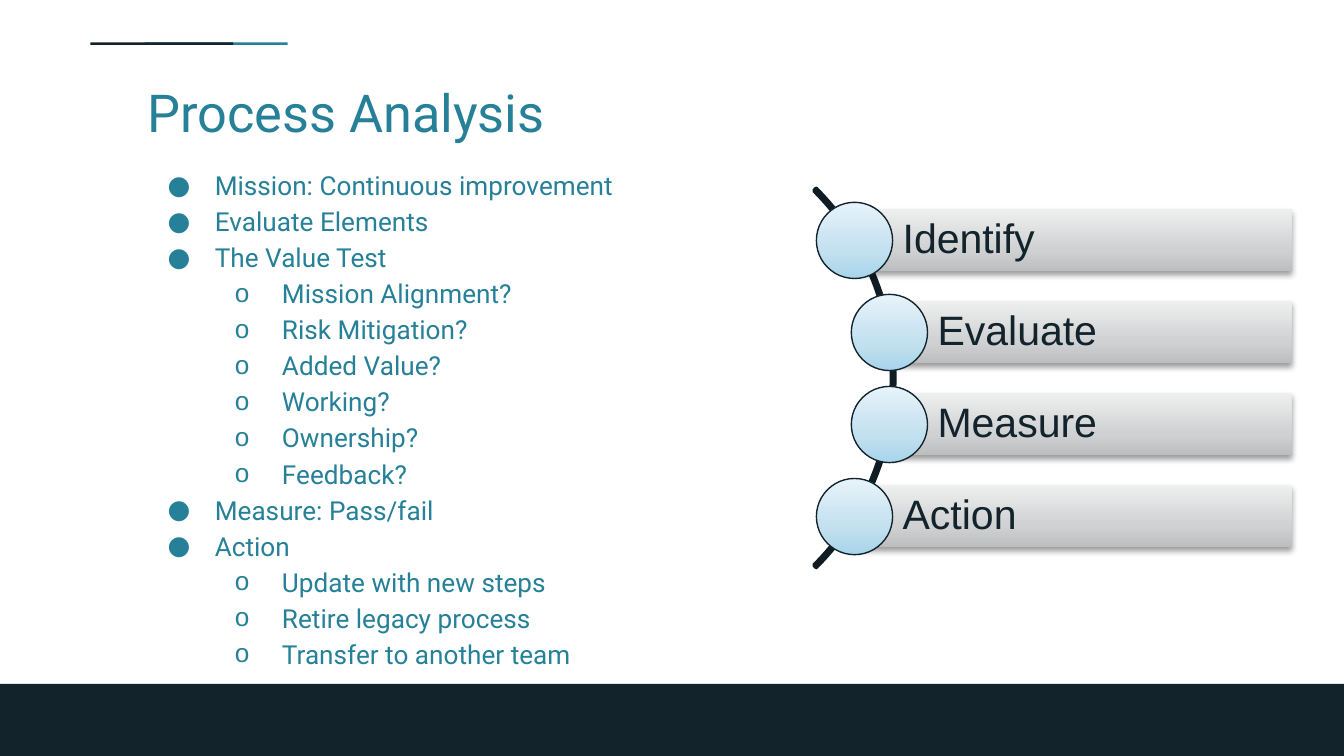
import pptx
import pptx.util
import pptx.oxml
import pptx.dml.color
import pptx.enum.shapes
import pptx.enum.text
from pptx.util import Cm

RGB = pptx.dml.color.RGBColor
KIND = pptx.enum.shapes.MSO_SHAPE
ANCHOR = pptx.enum.text.MSO_ANCHOR
ALIGN = pptx.enum.text.PP_ALIGN

NAVY = RGB(0x13, 0x23, 0x2C)
TEAL = RGB(0x26, 0x80, 0x98)
INK = RGB(0x0F, 0x1C, 0x23)
GREY = [(0, RGB(0xBC, 0xBE, 0xBF)), (35, RGB(0xD0, 0xD1, 0xD2)), (100, RGB(0xED, 0xEE, 0xEE))]
BLUE = [(0, RGB(0xA8, 0xD4, 0xEA)), (35, RGB(0xC2, 0xE0, 0xEF)), (100, RGB(0xE7, 0xF3, 0xFA))]
NS = 'xmlns:a="http://schemas.openxmlformats.org/drawingml/2006/main"'

# Outline level and text
POINTS = [
    (0, "Mission: Continuous improvement"),
    (0, "Evaluate Elements"),
    (0, "The Value Test"),
    (1, "Mission Alignment?"),
    (1, "Risk Mitigation?"),
    (1, "Added Value?"),
    (1, "Working?"),
    (1, "Ownership?"),
    (1, "Feedback?"),
    (0, "Measure: Pass/fail"),
    (0, "Action"),
    (1, "Update with new steps"),
    (1, "Retire legacy process"),
    (1, "Transfer to another team"),
]
# Step name and left edge in cm
STEPS = [("Identify", 16.15), ("Evaluate", 16.81), ("Measure", 16.81), ("Action", 16.15)]


def put(item, **values):
    for name, value in values.items():
        setattr(item, name, value)


def xml(text):
    return pptx.oxml.parse_xml(text)


def shape(slide, kind, left, top, width, height, fill=None, line=None, weight=0):
    item = slide.shapes.add_shape(kind, Cm(left), Cm(top), Cm(width), Cm(height))
    item.shadow.inherit = False
    if fill is None:
        item.fill.background()
    else:
        item.fill.solid()
        item.fill.fore_color.rgb = fill
    if line is None:
        item.line.fill.background()
    else:
        item.line.color.rgb = line
        item.line.width = pptx.util.Pt(weight)
    return item


def blend(item, stops):
    """Give a shape a gradient that runs from bottom to top."""
    marks = "".join(f'<a:gs pos="{pos * 1000}"><a:srgbClr val="{tone}"/></a:gs>'
                    for pos, tone in stops)
    item.fill.background()
    old = item.element.spPr.find(pptx.oxml.ns.qn("a:noFill"))
    old.getparent().replace(old, xml(
        f'<a:gradFill {NS} rotWithShape="1"><a:gsLst>{marks}</a:gsLst>'
        '<a:lin ang="16200000" scaled="0"/></a:gradFill>'))


def shade(item):
    """Drop a soft shadow below a shape."""
    item.element.spPr.find(pptx.oxml.ns.qn("a:effectLst")).append(xml(
        f'<a:outerShdw {NS} blurRad="40000" dist="20000" dir="5400000" rotWithShape="0">'
        '<a:srgbClr val="000000"><a:alpha val="38000"/></a:srgbClr></a:outerShdw>'))


def style(para, size, name, color):
    put(para.font, size=pptx.util.Pt(size), name=name)
    para.font.color.rgb = color


def box(slide, left, top, width, height):
    frame = slide.shapes.add_textbox(Cm(left), Cm(top), Cm(width), Cm(height)).text_frame
    inset = Cm(0.25)
    put(frame, word_wrap=True, margin_left=inset, margin_right=inset,
        margin_top=inset, margin_bottom=inset)
    return frame


def bullet(para, level):
    props = para._p.get_or_add_pPr()
    props.set("marL", str(Cm(1.27 * (level + 1))))
    props.set("indent", str(-Cm(0.89)))
    props.append(xml(f'<a:buClr {NS}><a:srgbClr val="{TEAL}"/></a:buClr>'))
    props.append(xml(f'<a:buFont {NS} typeface="{("Roboto", "Arial")[level]}"/>'))
    props.append(xml(f'<a:buChar {NS} char="{"●o"[level]}"/>'))


def outline(slide):
    frame = box(slide, 2.54, 2.87, 12.17, 9.88)
    for i, (level, text) in enumerate(POINTS):
        para = frame.add_paragraph() if i else frame.paragraphs[0]
        bullet(para, level)
        put(para, text=text, level=level, line_spacing=1.15)
        style(para, 14, "Roboto", TEAL)


def step(slide, text, left, top):
    tall, dot = 1.17, 1.44
    bar = shape(slide, KIND.RECTANGLE, left, top, 24.41 - left, tall)
    blend(bar, GREY)
    shade(bar)
    inset = Cm(0.15)
    put(bar.text_frame, vertical_anchor=ANCHOR.MIDDLE, word_wrap=True,
        margin_left=Cm(0.91), margin_right=inset, margin_top=inset, margin_bottom=inset)
    para = bar.text_frame.paragraphs[0]
    put(para, text=text, alignment=ALIGN.LEFT, line_spacing=0.9)
    style(para, 22, "Arial", NAVY)
    ball = shape(slide, KIND.OVAL, left - dot / 2, top + (tall - dot) / 2, dot, dot,
                 line=NAVY, weight=0.75)
    blend(ball, BLUE)


def main():
    deck = pptx.Presentation()
    put(deck, slide_width=Cm(25.4), slide_height=Cm(14.29))
    slide = deck.slides.add_slide(deck.slide_layouts[6])

    # Footer band and accent rule
    shape(slide, KIND.RECTANGLE, 0, 12.93, 25.4, 1.36, NAVY)
    for left, color in [(2.74, TEAL), (1.71, NAVY)]:
        shape(slide, KIND.RECTANGLE, left, 0.8, 2.7, 0.05, color)

    # Title and outline
    para = box(slide, 2.54, 1.27, 22.4, 1.6).paragraphs[0]
    para.text = "Process Analysis"
    style(para, 28, "Roboto", TEAL)
    outline(slide)

    # Curved step list
    arc = shape(slide, KIND.BLOCK_ARC, 6.78, 2.08, 10.13, 10.13, line=INK, weight=2)
    for i, value in enumerate([189, 27, 0.006]):
        arc.adjustments[i] = value
    for i, (text, left) in enumerate(STEPS):
        step(slide, text, left, 3.96 + 1.74 * i)

    deck.save("out.pptx")


if __name__ == "__main__":
    main()
